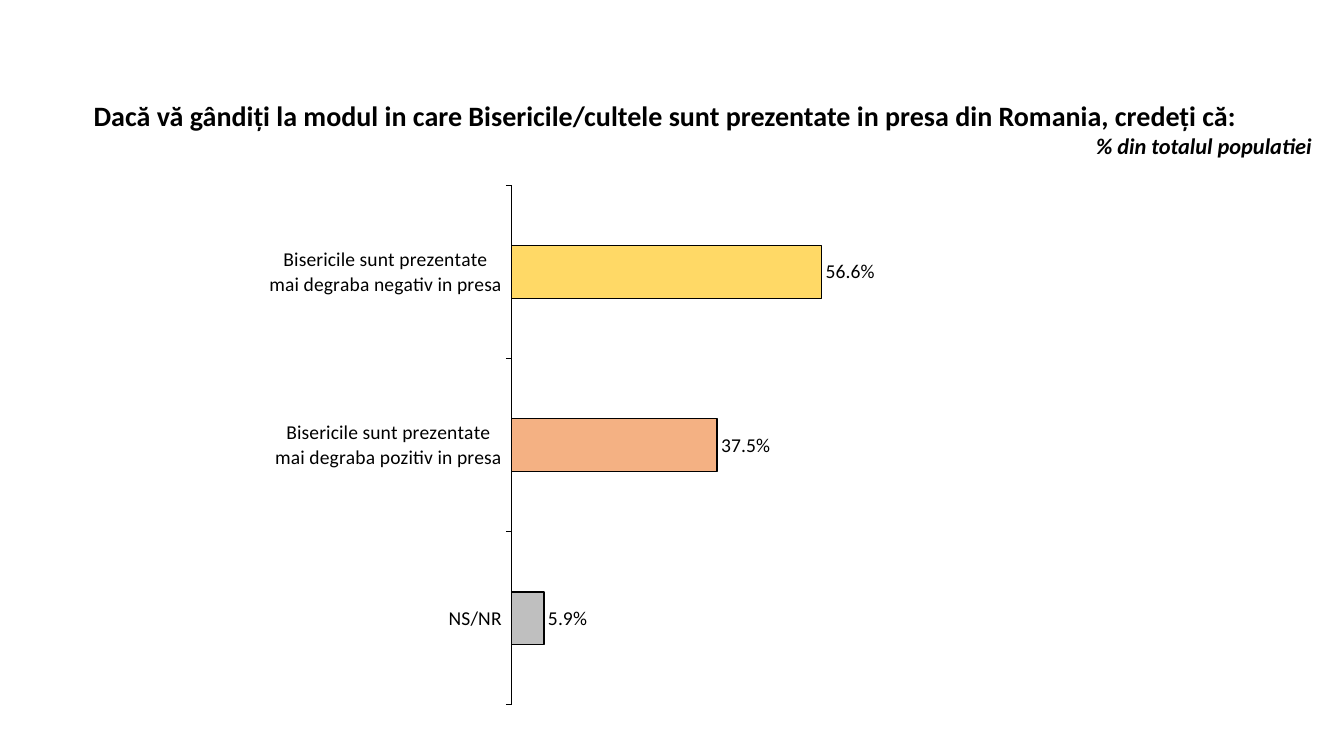
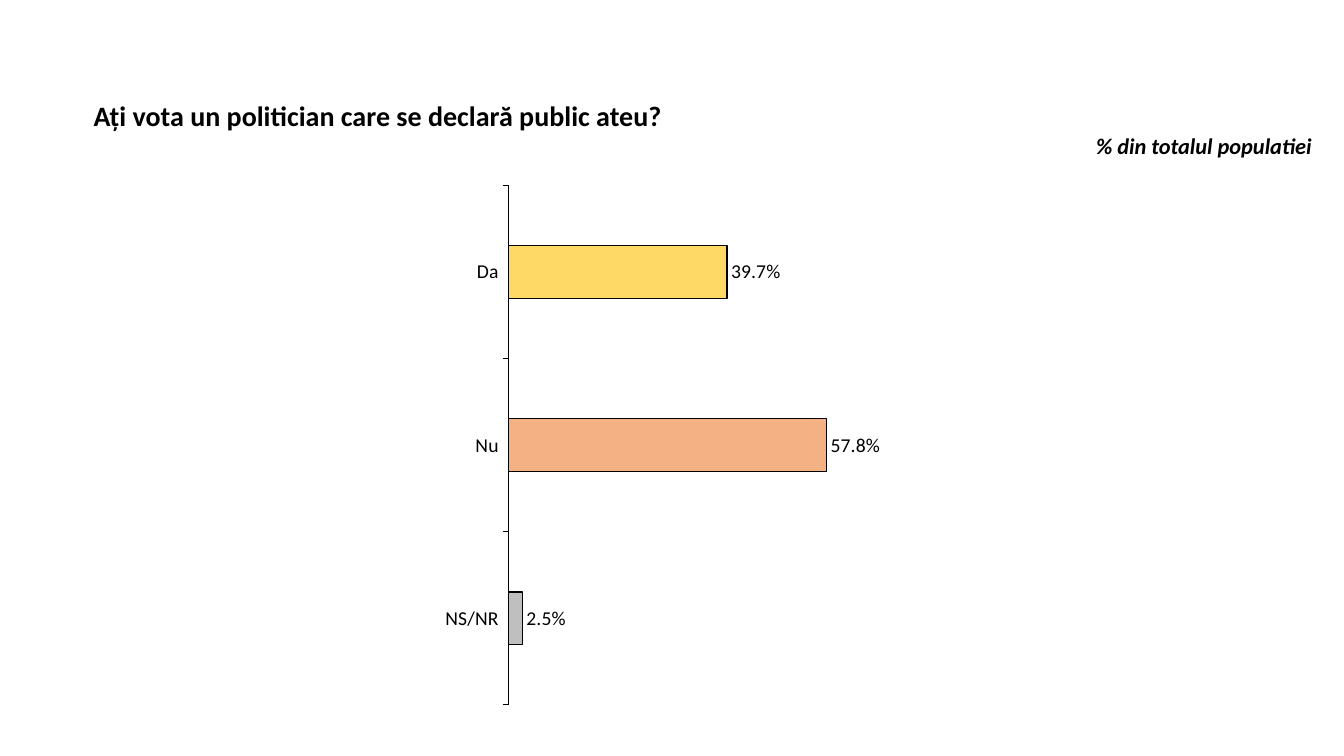
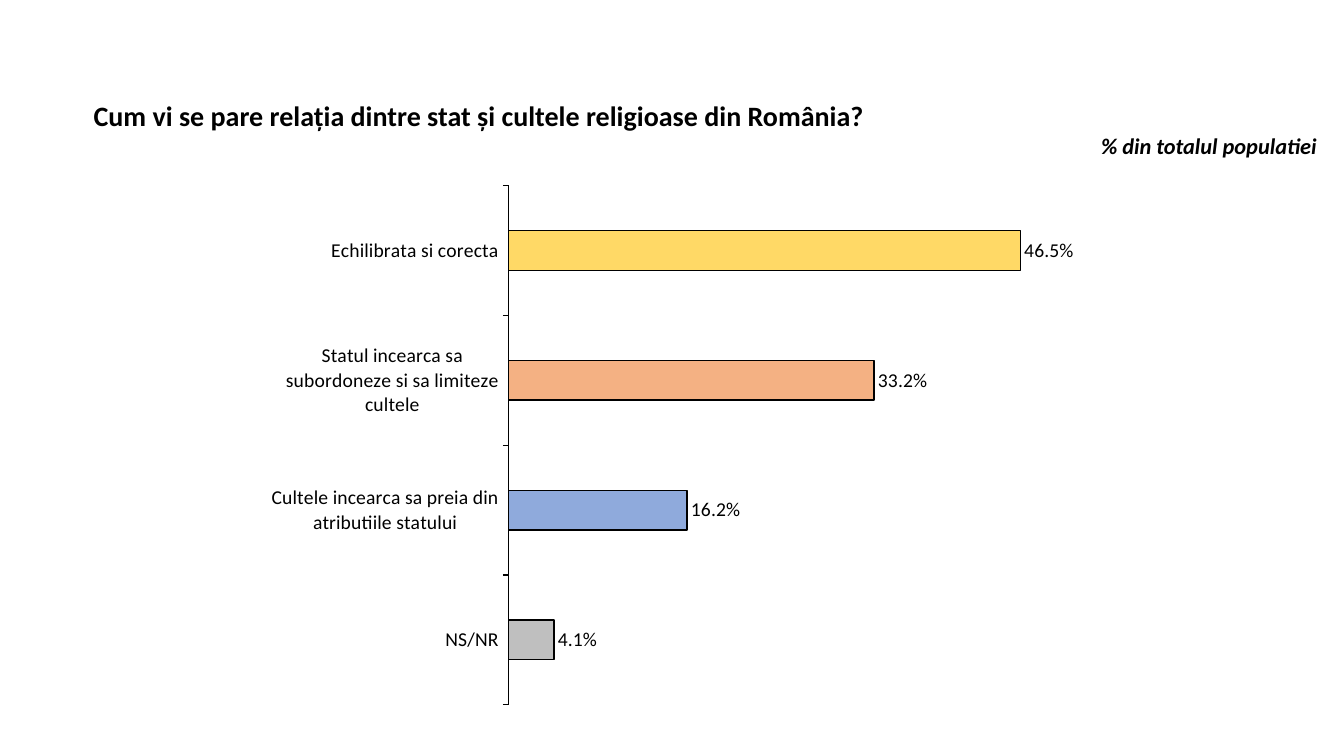
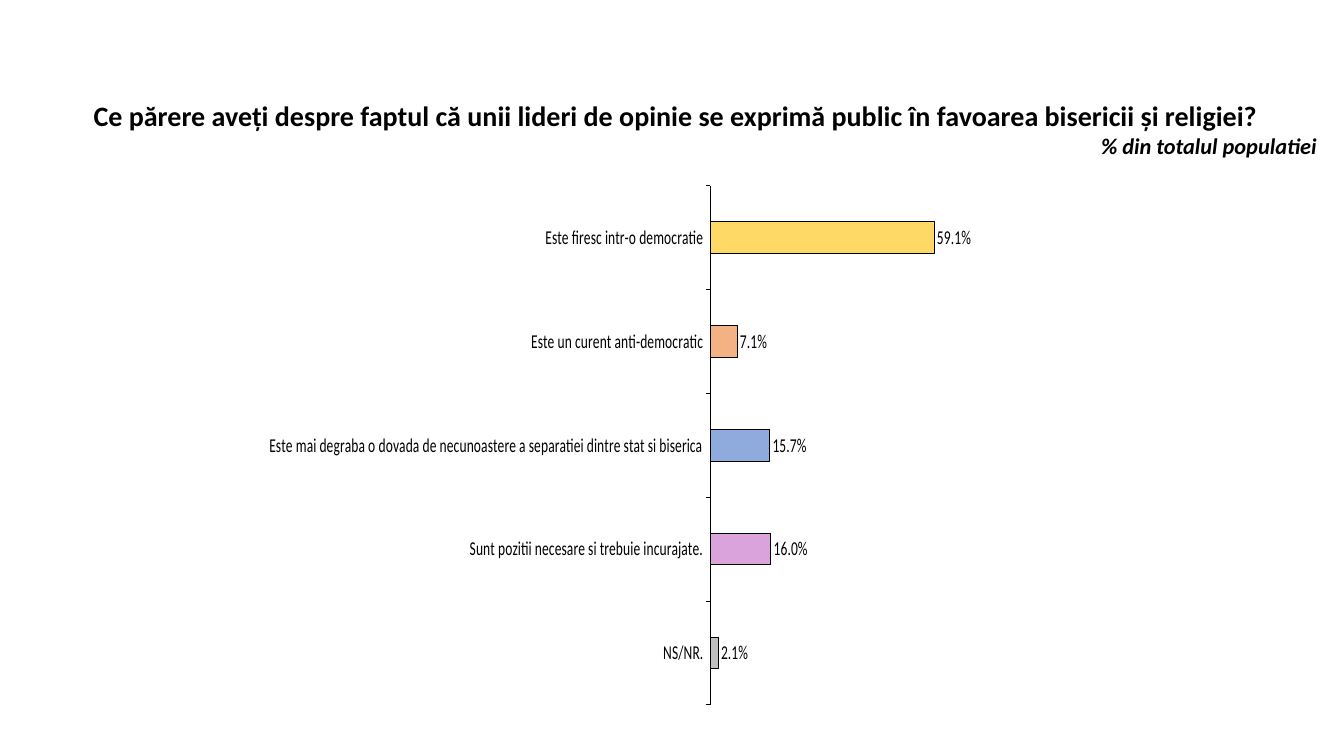
from dataclasses import dataclass

from lxml.etree import SubElement
from pptx import Presentation
from pptx.chart.chart import Chart
from pptx.chart.data import CategoryChartData
from pptx.dml.color import RGBColor
from pptx.enum.chart import XL_CHART_TYPE as ChartType
from pptx.enum.chart import XL_LABEL_POSITION as LabelPosition
from pptx.enum.chart import XL_TICK_MARK as TickMark
from pptx.enum.text import MSO_AUTO_SIZE as AutoSize
from pptx.enum.text import PP_ALIGN as Align
from pptx.oxml.ns import qn
from pptx.slide import Slide
from pptx.util import Inches, Pt

FONT = "Calibri"
BLACK, WHITE = "000000", "FFFFFF"
YELLOW, ORANGE, BLUE, PINK, GREY = "FFD966", "F4B183", "8FAADC", "DBA3DB", "BFBFBF"
PERCENT = "###0.0%"
CHART_BOX = tuple(Inches(length) for length in (2.67, 1.73, 8.8, 5.6))
HEADING_BOX = tuple(Inches(length) for length in (0.83, 0.93, 12.33, 0.71))
PLOT_AREA = {"x": 0.27, "y": 0.02, "w": 0.62, "h": 0.92}
QUESTION_STYLE = {"size": Pt(20), "bold": True}
NOTE_STYLE = {"size": Pt(16), "bold": True, "italic": True}
CHART_STYLE = {"size": Pt(14), "bold": False}


@dataclass(frozen=True)
class Answer:
    label: str
    share: float
    color: str


@dataclass(frozen=True)
class Poll:
    question: str
    note: str
    answers: tuple[Answer, ...]
    wrap_labels: bool = True


POLLS = (
    Poll(
        "Dacă vă gândiți la modul in care Bisericile/cultele sunt prezentate in presa din Romania, credeți că:",
        "% din totalul populatiei ",
        (
            Answer("Bisericile sunt prezentate mai degraba negativ in presa", 0.566, YELLOW),
            Answer("Bisericile sunt prezentate mai degraba pozitiv in presa", 0.375, ORANGE),
            Answer("NS/NR", 0.059, GREY),
        ),
    ),
    Poll(
        "Ați vota un politician care se declară public ateu?",
        "% din totalul populatiei ",
        (
            Answer("Da", 0.397, YELLOW),
            Answer("Nu", 0.578, ORANGE),
            Answer("NS/NR", 0.025, GREY),
        ),
    ),
    Poll(
        "Cum vi se pare relația dintre stat și cultele religioase din România?",
        "% din totalul populatiei",
        (
            Answer("Echilibrata si corecta", 0.465, YELLOW),
            Answer("Statul incearca sa subordoneze si sa limiteze cultele", 0.332, ORANGE),
            Answer("Cultele incearca sa preia din atributiile statului", 0.162, BLUE),
            Answer("NS/NR", 0.041, GREY),
        ),
    ),
    Poll(
        "Ce părere aveți despre faptul că unii lideri de opinie se exprimă public în favoarea bisericii și religiei?",
        "% din totalul populatiei",
        (
            Answer("Este firesc intr-o democratie", 0.591, YELLOW),
            Answer("Este un curent anti-democratic", 0.071, ORANGE),
            Answer("Este mai degraba o dovada de necunoastere a separatiei dintre stat si biserica", 0.157, BLUE),
            Answer("Sunt pozitii necesare si trebuie incurajate.", 0.16, PINK),
            Answer("NS/NR.", 0.021, GREY),
        ),
        wrap_labels=False,
    ),
)


def rgb(color: str) -> RGBColor:
    return RGBColor.from_string(color)


def set_attributes(target, values: dict) -> None:
    for name, value in values.items():
        setattr(target, name, value)


def style_font(font, style: dict) -> None:
    set_attributes(font, {"name": FONT, **style})
    font.color.rgb = rgb(BLACK)


def style_area(area_format, color: str) -> None:
    """Fill a bar and give it a thin black outline."""
    area_format.fill.solid()
    area_format.fill.fore_color.rgb = rgb(color)
    area_format.line.color.rgb = rgb(BLACK)
    area_format.line.width = Pt(1)


def place_plot_area(chart: Chart) -> None:
    """Fix the inner plot area as fractions of the chart."""
    plot_area = chart.element.find(f".//{qn('c:plotArea')}")
    layout = plot_area.find(qn("c:layout"))
    if layout is None:
        layout = SubElement(plot_area, qn("c:layout"))
        plot_area.insert(0, layout)
    manual = SubElement(layout, qn("c:manualLayout"))
    settings = {"layoutTarget": "inner", "xMode": "edge", "yMode": "edge", **PLOT_AREA}
    for name, value in settings.items():
        SubElement(manual, qn(f"c:{name}")).set("val", str(value))


def style_axes(chart: Chart, wrap_labels: bool) -> None:
    category_axis, value_axis = chart.category_axis, chart.value_axis
    set_attributes(category_axis, {
        "reverse_order": True,
        "has_major_gridlines": False,
        "major_tick_mark": TickMark.OUTSIDE,
        "minor_tick_mark": TickMark.NONE,
    })
    category_axis.format.line.color.rgb = rgb(BLACK)
    category_axis.format.line.width = Pt(0.75)
    if wrap_labels:  # labels with their own text properties wrap
        style_font(category_axis.tick_labels.font, CHART_STYLE)
    set_attributes(value_axis, {
        "visible": False,
        "has_major_gridlines": False,
        "minimum_scale": 0,
        "major_unit": 0.5,
    })


def add_answers_chart(slide: Slide, poll: Poll) -> None:
    data = CategoryChartData(number_format=PERCENT)
    data.categories = [answer.label for answer in poll.answers]
    data.add_series("Series 1", [answer.share for answer in poll.answers])
    chart = slide.shapes.add_chart(ChartType.BAR_CLUSTERED, *CHART_BOX, data).chart
    set_attributes(chart, {"has_title": False, "has_legend": False})
    style_font(chart.font, CHART_STYLE)
    place_plot_area(chart)
    style_axes(chart, poll.wrap_labels)

    plot = chart.plots[0]
    set_attributes(plot, {"gap_width": 227, "overlap": -48, "vary_by_categories": False})
    series = plot.series[0]
    series.invert_if_negative = False
    style_area(series.format, WHITE)
    for index, answer in enumerate(poll.answers):
        style_area(series.points[index].format, answer.color)
    labels = series.data_labels
    set_attributes(labels, {
        "show_value": True,
        "position": LabelPosition.OUTSIDE_END,
        "number_format": PERCENT,
        "number_format_is_linked": False,
    })
    style_font(labels.font, CHART_STYLE)


def add_heading(slide: Slide, poll: Poll) -> None:
    frame = slide.shapes.add_textbox(*HEADING_BOX).text_frame
    set_attributes(frame, {"word_wrap": True, "auto_size": AutoSize.SHAPE_TO_FIT_TEXT})
    lines = (
        (frame.paragraphs[0], poll.question, Align.LEFT, QUESTION_STYLE),
        (frame.add_paragraph(), poll.note, Align.RIGHT, NOTE_STYLE),
    )
    for paragraph, text, alignment, style in lines:
        paragraph.alignment = alignment
        run = paragraph.add_run()
        run.text = text
        style_font(run.font, style)


def main() -> None:
    presentation = Presentation()
    set_attributes(presentation, {"slide_width": Inches(13.33), "slide_height": Inches(7.5)})
    blank_layout = presentation.slide_layouts[6]
    for poll in POLLS:
        slide = presentation.slides.add_slide(blank_layout)
        add_answers_chart(slide, poll)
        add_heading(slide, poll)
    presentation.save("out.pptx")


if __name__ == "__main__":
    main()
